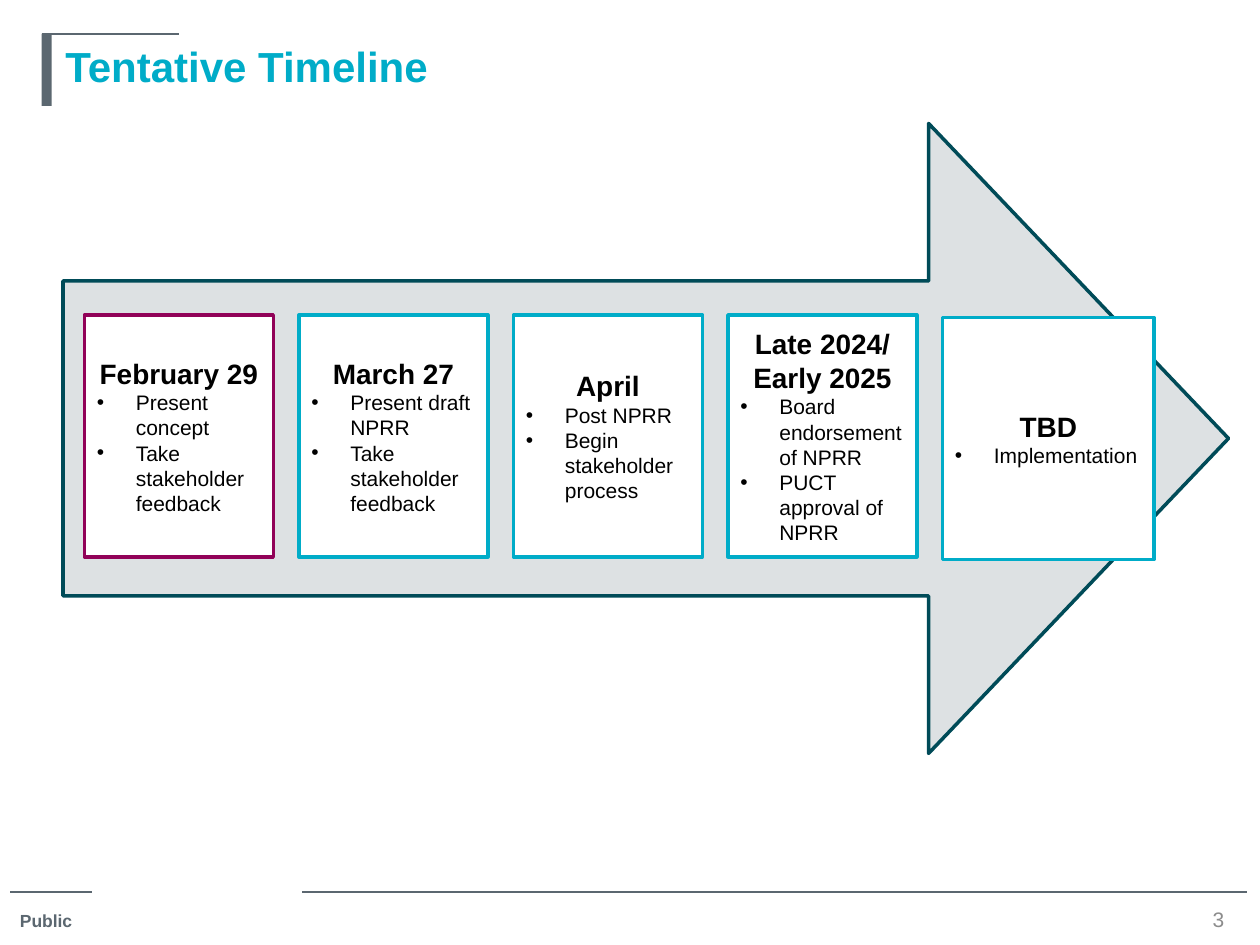
import pptx
import pptx.util
import pptx.dml.color
import pptx.enum.shapes
import pptx.enum.text
import pptx.oxml.xmlchemy

Inches, Pt = pptx.util.Inches, pptx.util.Pt
RGBColor = pptx.dml.color.RGBColor
SHAPE = pptx.enum.shapes.MSO_SHAPE
ALIGN = pptx.enum.text.PP_ALIGN
ANCHOR = pptx.enum.text.MSO_ANCHOR
OxmlElement = pptx.oxml.xmlchemy.OxmlElement

SLATE = RGBColor(0x5B, 0x67, 0x70)
CYAN = RGBColor(0x00, 0xAC, 0xC8)
TEAL = RGBColor(0x00, 0x4B, 0x58)
PLUM = RGBColor(0x91, 0x02, 0x58)
PALE = RGBColor(0xDD, 0xE1, 0xE3)
GREY = RGBColor(0x8C, 0x8C, 0x8C)
WHITE = RGBColor(0xFF, 0xFF, 0xFF)
BLACK = RGBColor(0, 0, 0)

# Content: heading, bullets, outline colour
MILESTONES = [
    ("February 29", ["Present concept", "Take stakeholder feedback"], PLUM),
    ("March 27", ["Present draft NPRR", "Take stakeholder feedback"], CYAN),
    ("April", ["Post NPRR", "Begin stakeholder process"], CYAN),
    ("Late 2024/ Early 2025", ["Board endorsement of NPRR", "PUCT approval of NPRR"], CYAN),
    ("TBD", ["Implementation"], CYAN),
]
# Text, left, top, width, height, size, colour, bold, alignment, anchor, wrap
LABELS = [
    ("Tentative Timeline", 0.42, 0.27, 9.25, 1.25, 24, CYAN, True, ALIGN.LEFT, ANCHOR.TOP, True),
    ("Public", 0.06, 7.17, 0.77, 0.28, 10, SLATE, True, ALIGN.LEFT, ANCHOR.TOP, False),
    ("3", 9.42, 7.18, 0.5, 0.23, 12, GREY, False, ALIGN.CENTER, ANCHOR.MIDDLE, True),
]
# Horizontal rules: start, end, height on the slide
RULES = [(0.08, 0.73, 7.08), (2.4, 9.9, 7.08), (0.33, 1.42, 0.27)]

CARD_LEFT, CARD_TOP, CARD_WIDTH, CARD_HEIGHT = 0.67, 2.5, 1.5, 1.92
LAST_LEFT, LAST_TOP, LAST_WIDTH = 7.48, 2.52, 1.68
CARD_STEP = (LAST_LEFT - CARD_LEFT) / (len(MILESTONES) - 1)
BULLET_INDENT = 0.31

presentation = pptx.Presentation()
presentation.slide_width, presentation.slide_height = Inches(10), Inches(7.5)
slide = presentation.slides.add_slide(presentation.slide_layouts[6])


def add_run(paragraph, text, size, color, bold):
    run = paragraph.add_run()
    run.text = text
    run.font.name, run.font.size, run.font.bold = "Arial", Pt(size), bold
    run.font.color.rgb = color


def add_block(kind, left, top, width, height, fill, line=None):
    shape = slide.shapes.add_shape(kind, *map(Inches, (left, top, width, height)))
    shape.shadow.inherit = False
    shape.fill.solid()
    shape.fill.fore_color.rgb = fill
    if line is None:
        shape.line.fill.background()
    else:
        shape.line.color.rgb, shape.line.width = line, Pt(2)
    return shape


def add_bullet(paragraph):
    properties = paragraph._p.get_or_add_pPr()
    properties.set("marL", str(Inches(BULLET_INDENT)))
    properties.set("indent", str(-Inches(BULLET_INDENT)))
    for tag, key, value in [("a:buFont", "typeface", "Arial"), ("a:buChar", "char", "•")]:
        element = OxmlElement(tag)
        element.set(key, value)
        properties.append(element)


# Header and footer rules
for start, end, y in RULES:
    rule = slide.shapes.add_connector(
        pptx.enum.shapes.MSO_CONNECTOR.STRAIGHT, *map(Inches, (start, y, end, y)))
    rule.line.color.rgb, rule.line.width = SLATE, Pt(0.75)
    rule._element.spPr.append(OxmlElement("a:effectLst"))
add_block(SHAPE.RECTANGLE, 0.33, 0.27, 0.08, 0.57, SLATE)

# Timeline arrow
arrow = add_block(SHAPE.RIGHT_ARROW, 0.5, 0.98, 9.25, 5, PALE, TEAL)
arrow.adjustments[0], arrow.adjustments[1] = 0.5, 0.476

# Title, footer label and page number
for text, left, top, width, height, size, color, bold, align, anchor, wrap in LABELS:
    frame = slide.shapes.add_textbox(*map(Inches, (left, top, width, height))).text_frame
    frame.word_wrap, frame.vertical_anchor = wrap, anchor
    frame.paragraphs[0].alignment = align
    add_run(frame.paragraphs[0], text, size, color, bold)

# Milestone cards
for index, (heading, bullets, outline) in enumerate(MILESTONES):
    is_last = index == len(MILESTONES) - 1
    card = add_block(
        SHAPE.RECTANGLE, CARD_LEFT + index * CARD_STEP, LAST_TOP if is_last else CARD_TOP,
        LAST_WIDTH if is_last else CARD_WIDTH, CARD_HEIGHT, WHITE, outline)
    frame = card.text_frame
    frame.word_wrap, frame.vertical_anchor = True, ANCHOR.MIDDLE
    frame.paragraphs[0].alignment = ALIGN.CENTER
    add_run(frame.paragraphs[0], heading, 16, BLACK, True)
    for bullet in bullets:
        paragraph = frame.add_paragraph()
        paragraph.alignment = ALIGN.LEFT
        add_bullet(paragraph)
        add_run(paragraph, bullet, 12, BLACK, False)

presentation.save("out.pptx")
